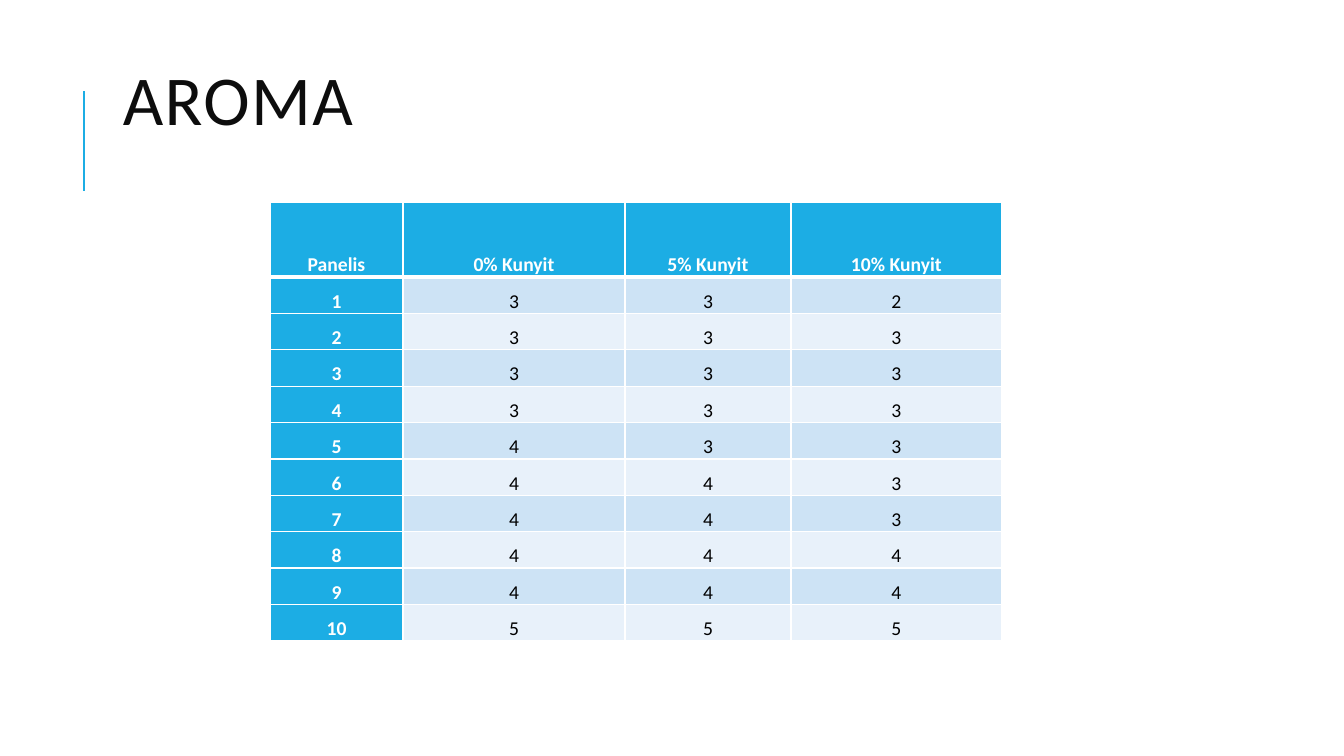
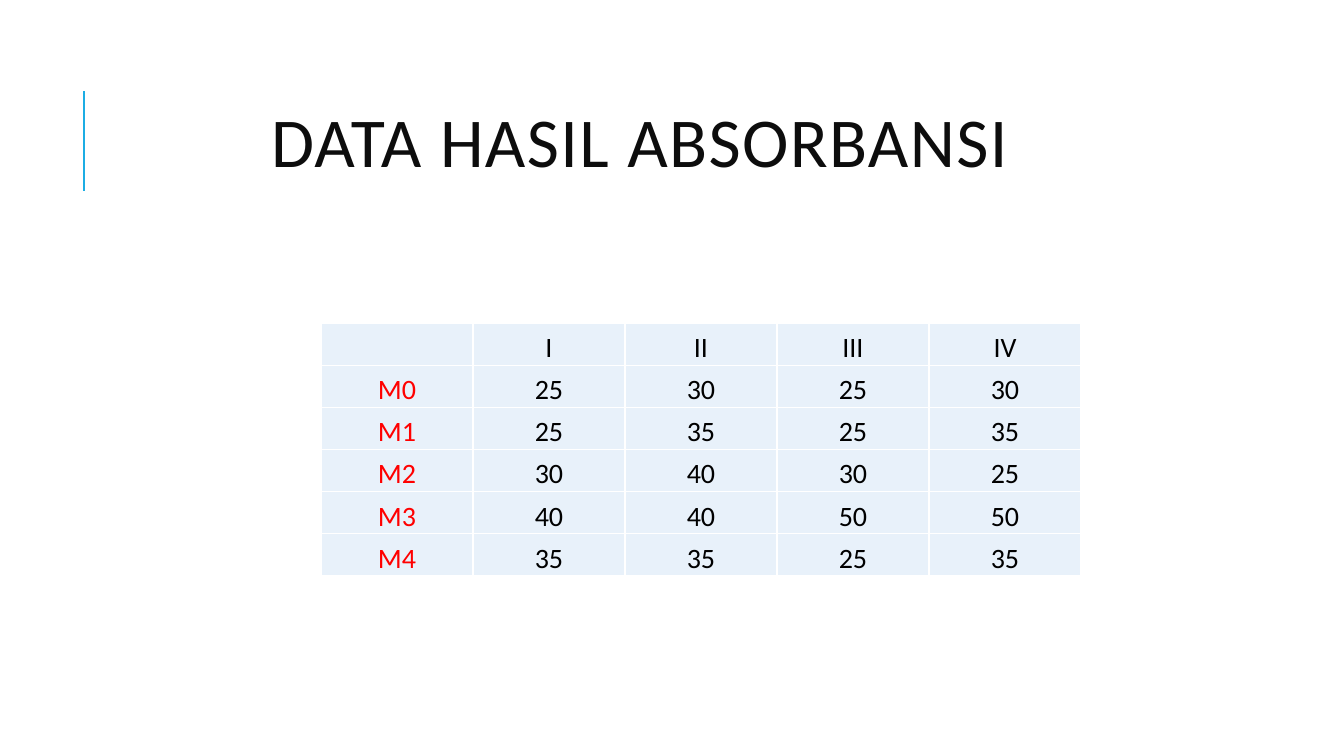
from lxml import etree
from pptx import Presentation
from pptx.dml.color import RGBColor
from pptx.enum.shapes import MSO_CONNECTOR
from pptx.enum.text import MSO_ANCHOR, PP_ALIGN
from pptx.oxml.ns import qn
from pptx.util import Emu, Pt

LEFT, CENTER = PP_ALIGN.LEFT, PP_ALIGN.CENTER
MIDDLE, BOTTOM = MSO_ANCHOR.MIDDLE, MSO_ANCHOR.BOTTOM
STRAIGHT = MSO_CONNECTOR.STRAIGHT

ACCENT = RGBColor(0x1C, 0xAD, 0xE4)
BAND_DARK = RGBColor(0xCD, 0xE3, 0xF5)
BAND_LIGHT = RGBColor(0xE8, 0xF1, 0xFA)
INK = RGBColor(0x0D, 0x0D, 0x0D)
BLACK = RGBColor(0, 0, 0)
WHITE = RGBColor(0xFF, 0xFF, 0xFF)
RED = RGBColor(0xFF, 0, 0)

FONT = "Calibri"
PX_PER_INCH = 100.8
SLIDE_SIZE = (1344, 756)
TITLE_BOX = (113, 65, 1071, 165)
ACCENT_LINE = (84, 191, 84, 91)

AROMA = [
    ("Panelis", "0% Kunyit", "5% Kunyit", "10% Kunyit"),
    (1, 3, 3, 2),
    (2, 3, 3, 3),
    (3, 3, 3, 3),
    (4, 3, 3, 3),
    (5, 4, 3, 3),
    (6, 4, 4, 3),
    (7, 4, 4, 3),
    (8, 4, 4, 4),
    (9, 4, 4, 4),
    (10, 5, 5, 5),
]
AROMA_COLUMNS = (133, 222, 166, 211)
AROMA_HEADER, AROMA_BODY = 75, 364

ABSORBANCE = [
    ("", "I", "II", "III", "IV"),
    ("M0", 25, 30, 25, 30),
    ("M1", 25, 35, 25, 35),
    ("M2", 30, 40, 30, 25),
    ("M3", 40, 40, 50, 50),
    ("M4", 35, 35, 25, 35),
]
ABSORBANCE_COLUMN, ABSORBANCE_HEIGHT = 152, 253


def px(length):
    return Emu(round(length * 914400 / PX_PER_INCH))


def write_text(frame, text, size, color, bold=False, align=CENTER,
               line_spacing=None, space_after=None, tracking=None):
    paragraph = frame.paragraphs[0]
    paragraph.alignment = align
    paragraph.line_spacing = line_spacing
    if space_after is not None:
        paragraph.space_after = Pt(space_after)
    run = paragraph.add_run()
    run.text = text
    font = run.font
    font.name, font.size, font.bold = FONT, Pt(size), bold
    font.color.rgb = color
    if tracking:
        font._element.set("spc", str(tracking * 100))


def add_base_slide(presentation, title, align, bottom_inset=5):
    """Add a slide with the accent line and the title."""
    slide = presentation.slides.add_slide(presentation.slide_layouts[6])
    line = slide.shapes.add_connector(STRAIGHT, *map(px, ACCENT_LINE))
    line.line.color.rgb = ACCENT
    line.line.width = Pt(1.5)
    etree.SubElement(line._element.spPr, qn("a:effectLst"))

    frame = slide.shapes.add_textbox(*map(px, TITLE_BOX)).text_frame
    frame.word_wrap = True
    frame.vertical_anchor = MIDDLE
    frame.margin_bottom = px(bottom_inset)
    write_text(frame, title, 50, INK, align=align, line_spacing=0.8, tracking=1)
    return slide


def set_borders(cell, top=1, bottom=1):
    """Draw white borders; they must come before the cell's fill."""
    properties = cell._tc.get_or_add_tcPr()
    for side, width in (("L", 1), ("R", 1), ("T", top), ("B", bottom)):
        border = etree.SubElement(properties, qn(f"a:ln{side}"), w=str(Pt(width)))
        fill = etree.SubElement(border, qn("a:solidFill"))
        etree.SubElement(fill, qn("a:srgbClr"), val=str(WHITE))


def add_table(slide, left, top, widths, heights, rows, cell_style, insets,
              header_rule=1, **text_format):
    """cell_style(row, column) gives the fill, text colour and boldness."""
    table = slide.shapes.add_table(
        len(rows), len(widths), px(left), px(top),
        px(sum(widths)), px(sum(heights))).table
    table.first_row = table.horz_banding = False
    for column, width in zip(table.columns, widths):
        column.width = px(width)
    for table_row, height in zip(table.rows, heights):
        table_row.height = px(height)

    for row, values in enumerate(rows):
        for column, value in enumerate(values):
            cell = table.cell(row, column)
            fill, color, bold = cell_style(row, column)
            set_borders(cell, top=header_rule if row == 1 else 1,
                        bottom=header_rule if row == 0 else 1)
            cell.fill.solid()
            cell.fill.fore_color.rgb = fill
            cell.vertical_anchor = BOTTOM
            side, upper = insets
            cell.margin_left = cell.margin_right = px(side)
            cell.margin_top, cell.margin_bottom = px(upper), 0
            if value != "":
                write_text(cell.text_frame, str(value), color=color, bold=bold,
                           **text_format)


def aroma_style(row, column):
    if row == 0 or column == 0:
        return ACCENT, WHITE, True
    return (BAND_DARK if row % 2 else BAND_LIGHT), BLACK, False


def absorbance_style(row, column):
    return BAND_LIGHT, (RED if column == 0 else BLACK), False


def main():
    presentation = Presentation()
    presentation.slide_width, presentation.slide_height = map(px, SLIDE_SIZE)

    slide = add_base_slide(presentation, "AROMA", LEFT, bottom_inset=89)
    body_rows = len(AROMA) - 1
    heights = [AROMA_HEADER] + [AROMA_BODY / body_rows] * body_rows
    add_table(slide, 270, 202, AROMA_COLUMNS, heights, AROMA, aroma_style,
              insets=(7, 0), header_rule=3, size=14, line_spacing=1.15,
              space_after=8)

    slide = add_base_slide(presentation, "DATA HASIL ABSORBANSI ", CENTER)
    widths = [ABSORBANCE_COLUMN] * len(ABSORBANCE[0])
    heights = [ABSORBANCE_HEIGHT / len(ABSORBANCE)] * len(ABSORBANCE)
    add_table(slide, 321, 323, widths, heights, ABSORBANCE, absorbance_style,
              insets=(1, 1), size=20)

    presentation.save("out.pptx")


if __name__ == "__main__":
    main()
